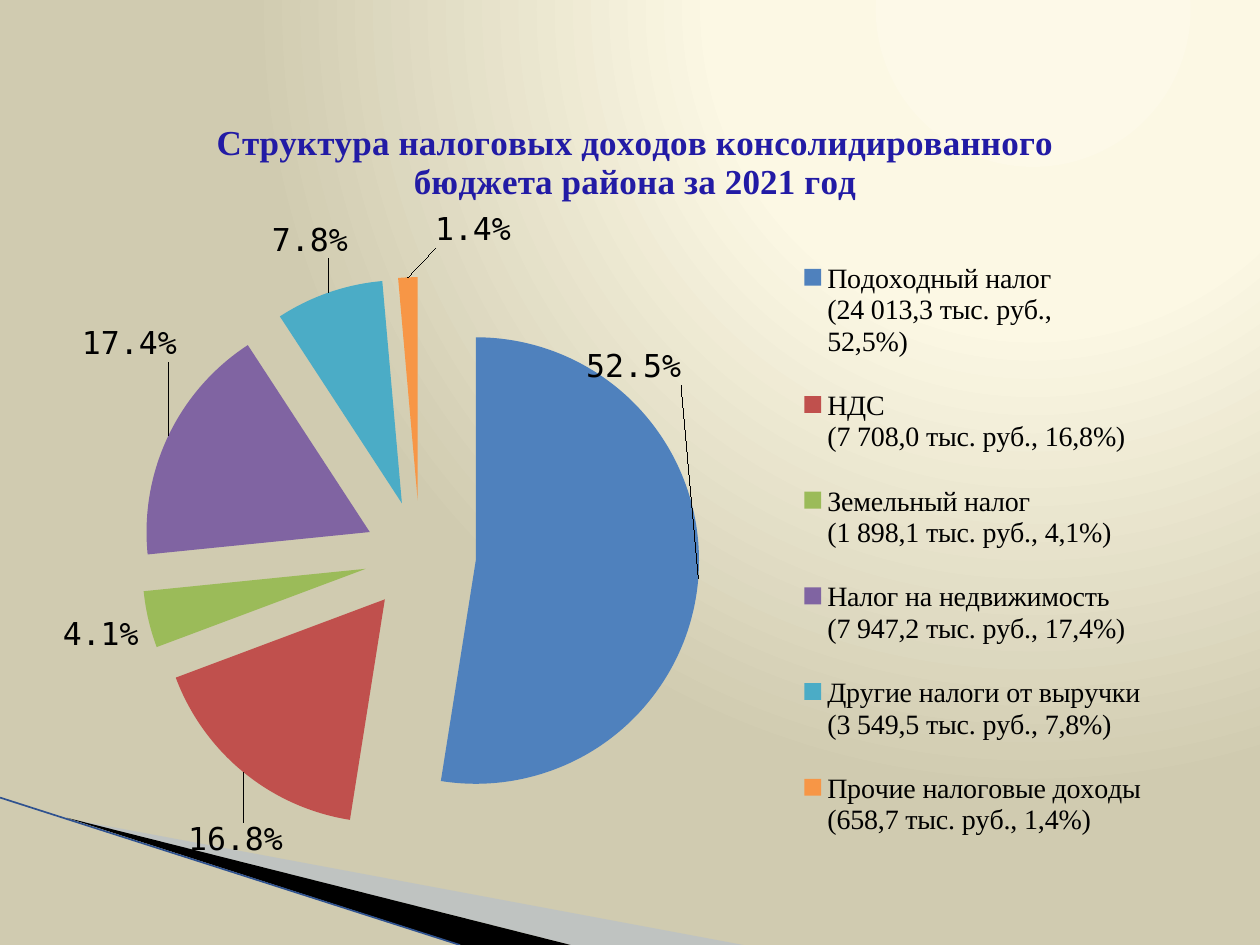
"""Build a slide with an exploded pie chart of the district's tax revenue."""
import pptx
import pptx.chart.data
import pptx.dml.color
import pptx.enum.chart
import pptx.oxml
import pptx.oxml.ns
import pptx.util

Inches = pptx.util.Inches
Pt = pptx.util.Pt
RGB = pptx.dml.color.RGBColor
qn = pptx.oxml.ns.qn

TITLE = "Структура налоговых доходов консолидированного бюджета района за 2021 год"
BLACK = RGB(0, 0, 0)
NAVY = RGB(0x22, 0x1B, 0xA5)
PALE = RGB(0xA7, 0xB9, 0xDB)
BLUE = RGB(0x2F, 0x52, 0x8F)
SERIF = "Times New Roman"
MONO = "DejaVu Sans Mono"
WIDE, HIGH = 9.53, 6.14

# name, details, share, colour, label shift in inches
TAXES = [
    ("Подоходный налог", "(24 013,3 тыс. руб.,\n52,5%)", 0.525, RGB(0x4F, 0x81, 0xBD), (-0.95, -1.68)),
    ("НДС", "(7 708,0 тыс. руб., 16,8%)", 0.168, RGB(0xC0, 0x50, 0x4D), (0.35, 0.35)),
    ("Земельный налог", "(1 898,1 тыс. руб., 4,1%)", 0.041, RGB(0x9B, 0xBB, 0x59), (-0.02, -0.04)),
    ("Налог на недвижимость", "(7 947,2 тыс. руб., 17,4%)", 0.174, RGB(0x80, 0x64, 0xA2), (0.12, -0.56)),
    ("Другие налоги от выручки", "(3 549,5 тыс. руб., 7,8%)", 0.078, RGB(0x4B, 0xAC, 0xC6), (0.17, -0.21)),
    ("Прочие налоговые доходы", "(658,7 тыс. руб., 1,4%)", 0.014, RGB(0xF7, 0x96, 0x46), (0.52, -0.17)),
]
WEDGES = [
    ([(0.55, 6.5), (5.9, 7.5), (4.53, 7.5)], PALE, 40),
    ([(0.53, 6.49), (4.53, 7.5), (3.66, 7.5)], BLACK, 100),
]
STOPS = [(0, "FDF9E8"), (40, "FCF8E4"), (100, "D0CBB0")]


def parse(tag, body=""):
    """Parse an element with the chart and drawing namespaces declared."""
    name = tag.split()[0]
    return pptx.oxml.parse_xml(f"<{tag} {pptx.oxml.ns.nsdecls('a', 'c')}>{body}</{name}>")


def layout(*box, inner=False, edge=True):
    """Return a manual chart layout from lengths in inches."""
    body = '<c:layoutTarget val="inner"/>' if inner else ""
    if edge:
        body += '<c:xMode val="edge"/><c:yMode val="edge"/>'
    for key, val, full in zip("xywh", box, (WIDE, HIGH) * 2):
        body += f'<c:{key} val="{val / full}"/>'
    return parse("c:layout", f"<c:manualLayout>{body}</c:manualLayout>")


def place(node, item, after=None):
    """Put a layout into a node, right after the named child."""
    for old in node.findall(qn("c:layout")):
        node.remove(old)
    prior = node.find(qn(after)) if after else None
    node.insert(0 if prior is None else node.index(prior) + 1, item)


def style(font, size, name):
    """Set the size, face and black colour of a font."""
    font.size, font.name = Pt(size), name
    font.color.rgb = BLACK


def paint(slide):
    """Fill the background with a round gradient."""
    fill = slide.background.fill
    fill.solid()
    fill.fore_color.rgb = BLACK
    old = slide._element.find(".//" + qn("p:bgPr")).find(qn("a:solidFill"))
    stops = "".join(f'<a:gs pos="{at * 1000}"><a:srgbClr val="{hue}"/></a:gs>' for at, hue in STOPS)
    path = '<a:path path="circle"><a:fillToRect l="65000" b="98000"/></a:path>'
    old.getparent().replace(old, parse("a:gradFill", f"<a:gsLst>{stops}</a:gsLst>{path}"))


def decorate(slide):
    """Draw the two wedges and the line in the lower corner."""
    for points, hue, alpha in WEDGES:
        spots = [(Inches(x), Inches(y)) for x, y in points]
        pen = slide.shapes.build_freeform(*spots[0])
        pen.add_line_segments(spots[1:], close=True)
        wedge = pen.convert_to_shape()
        wedge.shadow.inherit = False
        wedge.fill.solid()
        wedge.fill.fore_color.rgb = hue
        wedge.line.fill.background()
        if alpha < 100:
            clr = wedge._element.spPr.find(qn("a:solidFill"))[0]
            clr.append(parse(f'a:alpha val="{alpha * 1000}"'))
    line = slide.shapes.add_connector(1, 0, Inches(6.33), Inches(3.65), Inches(7.5))
    line.line.color.rgb = BLUE
    line.line.width = Pt(0.95)
    line._element.spPr.append(parse("a:effectLst"))


def label(series):
    """Show the shares and shift each label to its place."""
    best = pptx.enum.chart.XL_LABEL_POSITION.BEST_FIT
    tags = series.data_labels
    tags.show_value = True
    tags.number_format = "0.0%"
    tags.number_format_is_linked = False
    tags.position = best
    style(tags.font, 18, MONO)
    for i, (_, _, _, hue, shift) in enumerate(TAXES):
        point = series.points[i]
        point.format.fill.solid()
        point.format.fill.fore_color.rgb = hue
        point.data_label.position = best
        style(point.data_label.font, 18, MONO)
        node = tags._element.findall(qn("c:dLbl"))[-1]
        place(node, layout(*shift, edge=False), "c:idx")
        node.insert(2, parse('c:numFmt formatCode="0.0%" sourceLinked="0"'))


def chart(slide):
    """Add the pie with its title and legend."""
    data = pptx.chart.data.CategoryChartData(number_format="0.0%")
    data.categories = [f"{name}\n{note}" for name, note, *_ in TAXES]
    data.add_series("Series 1", [tax[2] for tax in TAXES])
    kind = pptx.enum.chart.XL_CHART_TYPE.PIE
    box = [Inches(v) for v in (0.28, 0.76, WIDE, HIGH)]
    pie = slide.shapes.add_chart(kind, *box, data).chart
    style(pie.font, 18, MONO)

    pie.has_title = True
    run = pie.chart_title.text_frame.paragraphs[0].add_run()
    run.text = TITLE
    style(run.font, 20, SERIF)
    run.font.bold = True
    run.font.color.rgb = NAVY
    place(pie.chart_title._element, layout(1.39, 0.14), "c:tx")

    pie.has_legend = True
    pie.legend.position = pptx.enum.chart.XL_LEGEND_POSITION.RIGHT
    pie.legend.include_in_layout = False
    style(pie.legend.font, 16, SERIF)
    place(pie.legend._element, layout(5.96, 1.07, 2.96, 5.07), "c:legendPos")

    plot = pie.plots[0]
    plot.vary_by_categories = True
    series = plot.series[0]
    label(series)
    dots = series._element.findall(qn("c:dPt"))
    dots[0].addprevious(parse('c:explosion val="25"'))
    for dot in dots:
        dot.find(qn("c:spPr")).addprevious(parse('c:explosion val="25"'))
    place(plot._element.getparent(), layout(0.84, 1.44, 4.43, 4.43, inner=True))


def main():
    """Build and save the deck."""
    deck = pptx.Presentation()
    deck.slide_width, deck.slide_height = Inches(10), Inches(7.5)
    slide = deck.slides.add_slide(deck.slide_layouts[6])
    paint(slide)
    decorate(slide)
    chart(slide)
    deck.save("out.pptx")


if __name__ == "__main__":
    main()
